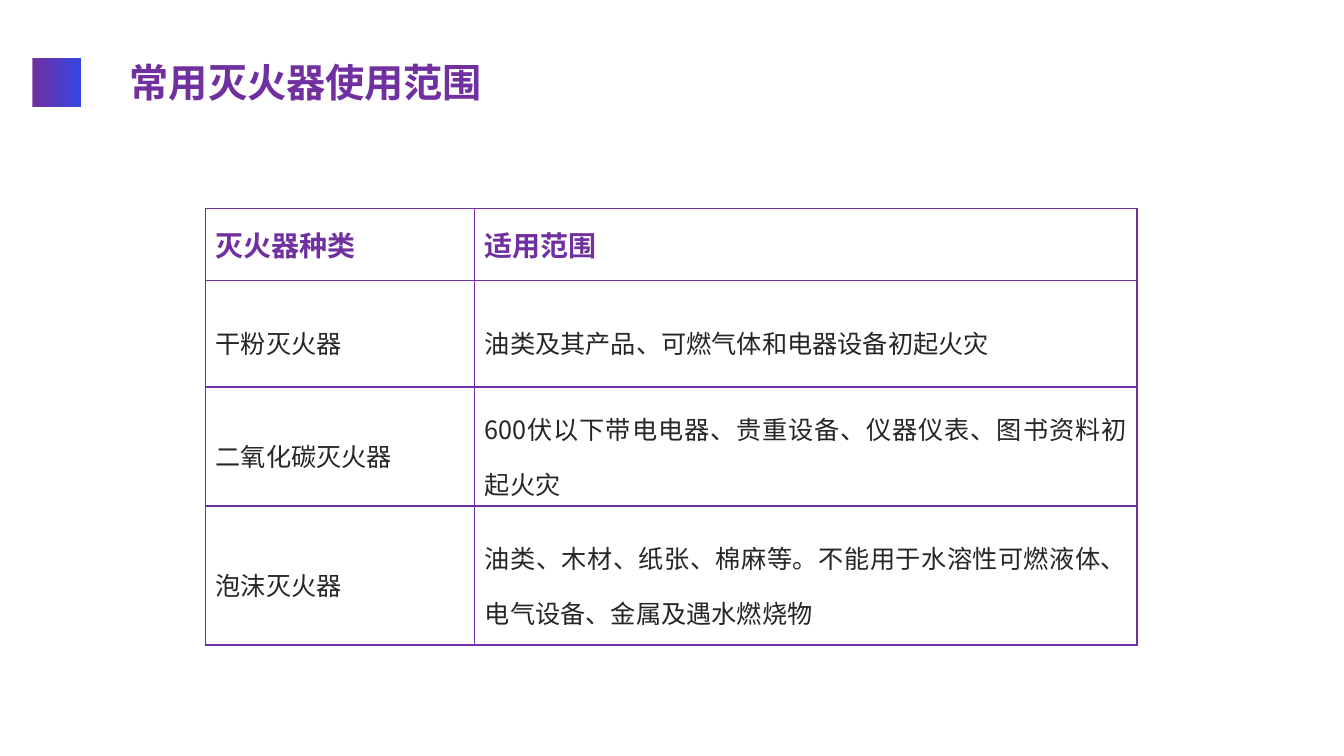
from dataclasses import dataclass

from lxml.etree import SubElement
from pptx import Presentation
from pptx.dml.color import RGBColor as RGB
from pptx.enum.shapes import MSO_SHAPE as SHAPE
from pptx.enum.text import MSO_ANCHOR as ANCHOR
from pptx.enum.text import MSO_AUTO_SIZE as AUTO
from pptx.enum.text import PP_ALIGN as ALIGN
from pptx.oxml.ns import qn
from pptx.util import Pt

FONT = "Noto Sans CJK SC"
COLORS = {"purple": "7030A0", "blue": "3546E1", "ink": "262626"}


@dataclass(frozen=True)
class TextStyle:
    size: float
    color: str
    bold: bool
    before_pct: int
    line: float | None = None
    align: ALIGN | None = None


@dataclass(frozen=True)
class Row:
    height: float
    kind: str
    scope: str
    style: TextStyle


TITLE = TextStyle(28, "purple", True, 50)
HEADER = TextStyle(20, "purple", True, 50)
BODY = TextStyle(18, "ink", False, 20, 1.5, ALIGN.JUSTIFY)

COLUMN_WIDTHS = (192.24, 473.04)
ROWS = (
    Row(51.12, "灭火器种类", "适用范围", HEADER),
    Row(76.32, "干粉灭火器", "油类及其产品、可燃气体和电器设备初起火灾", BODY),
    Row(84.96, "二氧化碳灭火器", "600伏以下带电电器、贵重设备、仪器仪表、图书资料初起火灾", BODY),
    Row(99.36, "泡沫灭火器", "油类、木材、纸张、棉麻等。不能用于水溶性可燃液体、电气设备、金属及遇水燃烧物", BODY),
)


def rgb(name: str) -> RGB:
    return RGB.from_string(COLORS[name])


def write(tf, text: str, style: TextStyle) -> None:
    p = tf.paragraphs[0]
    p.alignment = style.align
    p.line_spacing = style.line
    before = SubElement(p._p.get_or_add_pPr(), qn("a:spcBef"))
    SubElement(before, qn("a:spcPct"), val=str(style.before_pct * 1000))
    r = p.add_run()
    r.text = text
    r.font.size = Pt(style.size)
    r.font.bold = style.bold
    r.font.color.rgb = rgb(style.color)
    r.font.name = FONT
    SubElement(r._r.get_or_add_rPr(), qn("a:ea"), typeface=FONT)


def add_borders(cell, color: str, width: float) -> None:
    tc_pr = cell._tc.get_or_add_tcPr()
    for side in ("lnL", "lnR", "lnT", "lnB"):
        ln = SubElement(tc_pr, qn(f"a:{side}"), w=str(Pt(width)))
        fill = SubElement(ln, qn("a:solidFill"))
        SubElement(fill, qn("a:srgbClr"), val=COLORS[color])


def add_title(s, text: str) -> None:
    sp = s.shapes.add_textbox(Pt(85.68), Pt(38.16), Pt(269.28), Pt(41.04))
    tf = sp.text_frame
    tf.word_wrap = False
    tf.auto_size = AUTO.SHAPE_TO_FIT_TEXT
    write(tf, text, TITLE)


def add_marker(s) -> None:
    sp = s.shapes.add_shape(SHAPE.RECTANGLE, Pt(23.04), Pt(41.4), Pt(34.56), Pt(35.28))
    sp.shadow.inherit = False
    sp.line.fill.background()
    sp.fill.gradient()
    sp.fill.gradient_angle = 0
    for stop, color in zip(sp.fill.gradient_stops, ("purple", "blue")):
        stop.color.rgb = rgb(color)


def add_scope_table(s) -> None:
    height = sum(row.height for row in ROWS)
    frame = s.shapes.add_table(len(ROWS), len(COLUMN_WIDTHS), Pt(146.88), Pt(149.04),
                               Pt(sum(COLUMN_WIDTHS)), Pt(height))
    table = frame.table
    table.first_row = table.horz_banding = False
    for column, width in zip(table.columns, COLUMN_WIDTHS):
        column.width = Pt(width)
    for i, row in enumerate(ROWS):
        table.rows[i].height = Pt(row.height)
        for j, text in enumerate((row.kind, row.scope)):
            cell = table.cell(i, j)
            cell.vertical_anchor = ANCHOR.MIDDLE
            add_borders(cell, "purple", 1)
            cell.fill.background()
            write(cell.text_frame, text, row.style)


def main() -> None:
    prs = Presentation()
    prs.slide_width, prs.slide_height = Pt(960), Pt(540)
    s = prs.slides.add_slide(prs.slide_layouts[6])
    add_title(s, "常用灭火器使用范围")
    add_marker(s)
    add_scope_table(s)
    prs.save("out.pptx")


if __name__ == "__main__":
    main()
